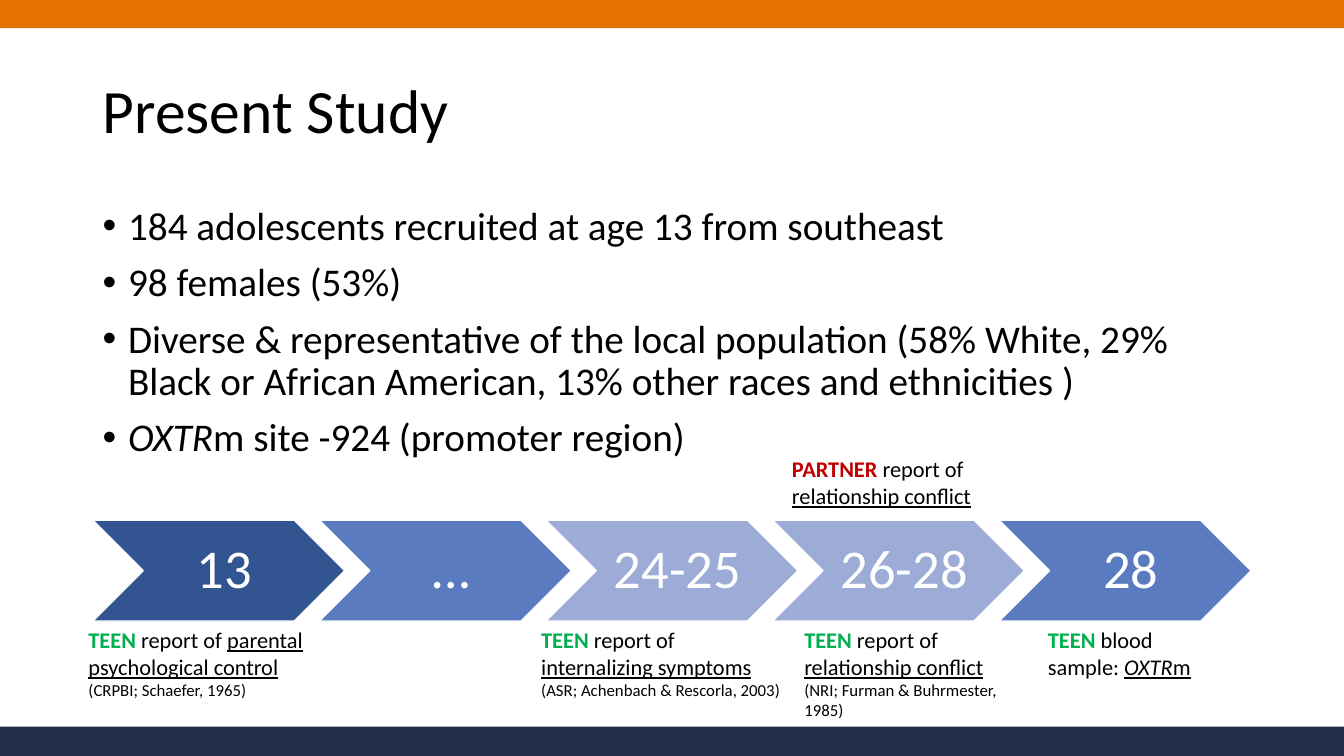
from lxml.etree import SubElement
from pptx import Presentation
from pptx.dml.color import RGBColor
from pptx.enum.shapes import MSO_SHAPE as Shape
from pptx.enum.text import MSO_ANCHOR as Anchor, PP_ALIGN as Align
from pptx.oxml.ns import qn
from pptx.util import Cm, Pt

FONT = "Calibri"
BLACK, WHITE = "000000", "FFFFFF"
ORANGE, NAVY = "E57200", "232D4B"
GREEN, RED = "00B050", "C00000"
DARK_BLUE, BLUE, PALE_BLUE = "325491", "5B7BC0", "9DACD6"

MARGIN, CONTENT_WIDTH = 2.34, 29.21
CHEVRON_TOP, CHEVRON_WIDTH, CHEVRON_HEIGHT, CHEVRON_STEP = 13.11, 6.35, 2.54, 5.71
NOTE_TOP = 15.65

BULLETS = [
    [("184 adolescents recruited at age 13 from southeast", {})],
    [("98 females (53%)", {})],
    [("Diverse & representative of the local population (58% White, 29% "
      "Black or African American, 13% other races and ethnicities )", {})],
    [("OXTR", {"italic": True}), ("m site -924 (promoter region)", {})],
]
AGES = [("13", DARK_BLUE), ("…", BLUE), ("24-25", PALE_BLUE),
        ("26-28", PALE_BLUE), ("28", BLUE)]
REPORTS = [
    (1.98, NOTE_TOP, 6.05, "TEEN", GREEN,
     "parental psychological control", "(CRPBI; Schaefer, 1965)"),
    (13.39, NOTE_TOP, 6.63, "TEEN", GREEN,
     "internalizing symptoms", "(ASR; Achenbach & Rescorla, 2003)"),
    (20.02, NOTE_TOP, 5.59, "TEEN", GREEN,
     "relationship conflict", "(NRI; Furman & Buhrmester, 1985)"),
    (19.71, 11.35, 5.21, "PARTNER", RED, "relationship conflict", None),
]


def color(value):
    """Return the colour of a hex string."""
    return RGBColor.from_string(value)


def add_text(paragraph, text, size=16, fill=BLACK, bold=False, italic=False, underline=False):
    """Append a formatted run to a paragraph."""
    run = paragraph.add_run()
    run.text = text
    font = run.font
    font.name, font.size = FONT, Pt(size)
    font.bold, font.italic, font.underline = bold, italic, underline
    font.color.rgb = color(fill)


def add_box(slide, left, top, width, height, anchor=Anchor.TOP):
    """Add a wrapping text box and return its text frame."""
    frame = slide.shapes.add_textbox(Cm(left), Cm(top), Cm(width), Cm(height)).text_frame
    frame.word_wrap = True
    frame.vertical_anchor = anchor
    return frame


def add_filled(slide, kind, left, top, width, height, fill):
    """Add a flat filled shape without an outline."""
    shape = slide.shapes.add_shape(kind, Cm(left), Cm(top), Cm(width), Cm(height))
    shape.shadow.inherit = False
    shape.fill.solid()
    shape.fill.fore_color.rgb = color(fill)
    shape.line.fill.background()
    return shape


def add_title(slide, text):
    """Add the slide heading."""
    frame = add_box(slide, MARGIN, 1.01, CONTENT_WIDTH, 3.68, Anchor.MIDDLE)
    paragraph = frame.paragraphs[0]
    paragraph.line_spacing = 0.9
    add_text(paragraph, text, size=44)


def add_bullets(slide, items):
    """Add the bulleted list, one paragraph for each list of runs."""
    frame = add_box(slide, MARGIN, 5.08, CONTENT_WIDTH, 7.52)
    for index, runs in enumerate(items):
        paragraph = frame.add_paragraph() if index else frame.paragraphs[0]
        paragraph.line_spacing = 0.9
        paragraph.space_before = Pt(10)
        properties = paragraph._p.get_or_add_pPr()
        properties.set("marL", str(Cm(0.64)))
        properties.set("indent", str(-Cm(0.64)))
        SubElement(properties, qn("a:buFont"), typeface="Arial")
        SubElement(properties, qn("a:buChar"), char="•")
        for text, style in runs:
            add_text(paragraph, text, size=28, **style)


def add_chevron(slide, index, age, fill):
    """Add one labelled step of the age timeline."""
    chevron = add_filled(slide, Shape.CHEVRON, MARGIN + index * CHEVRON_STEP, CHEVRON_TOP,
                         CHEVRON_WIDTH, CHEVRON_HEIGHT, fill)
    chevron.line.color.rgb = color(WHITE)
    chevron.line.width = Pt(1)
    frame = chevron.text_frame
    frame.vertical_anchor = Anchor.MIDDLE
    frame.margin_left = Cm(0.43)
    frame.margin_right = frame.margin_top = frame.margin_bottom = Cm(0.15)
    paragraph = frame.paragraphs[0]
    paragraph.alignment = Align.CENTER
    paragraph.line_spacing = 0.9
    add_text(paragraph, age, size=39, fill=WHITE)


def add_note(slide, left, top, width, source, fill, text):
    """Add a timeline note that opens with its source and return its frame."""
    frame = add_box(slide, left, top, width, 1.63)
    paragraph = frame.paragraphs[0]
    add_text(paragraph, source, fill=fill, bold=True)
    add_text(paragraph, text)
    return frame


def add_report(slide, left, top, width, source, fill, measure, citation):
    """Add a note on a reported measure with its citation, if any."""
    frame = add_note(slide, left, top, width, source, fill, " report of ")
    add_text(frame.paragraphs[0], measure, underline=True)
    if citation:
        add_text(frame.add_paragraph(), citation, size=12)


def main():
    """Build and save the slide."""
    presentation = Presentation()
    presentation.slide_width, presentation.slide_height = Cm(33.87), Cm(19.05)
    slide = presentation.slides.add_slide(presentation.slide_layouts[6])

    add_title(slide, "Present Study")
    add_bullets(slide, BULLETS)
    for top, fill in ((-0.13, ORANGE), (18.31, NAVY)):
        add_filled(slide, Shape.RECTANGLE, -0.28, top, 34.44, 0.84, fill)
    for index, (age, fill) in enumerate(AGES):
        add_chevron(slide, index, age, fill)
    for report in REPORTS:
        add_report(slide, *report)
    blood = add_note(slide, 26.16, NOTE_TOP, 4.8, "TEEN", GREEN, " blood sample: ").paragraphs[0]
    add_text(blood, "OXTR", italic=True, underline=True)
    add_text(blood, "m", underline=True)

    presentation.save("out.pptx")


if __name__ == "__main__":
    main()
